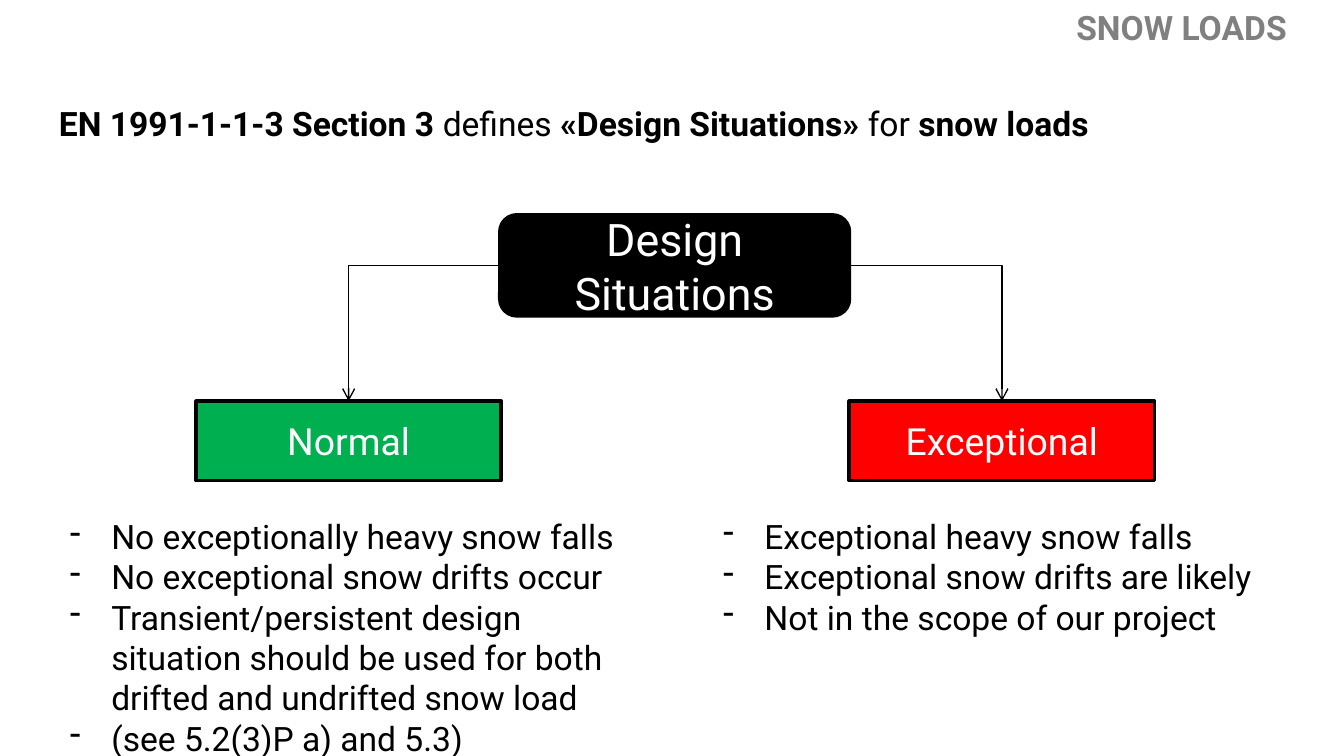
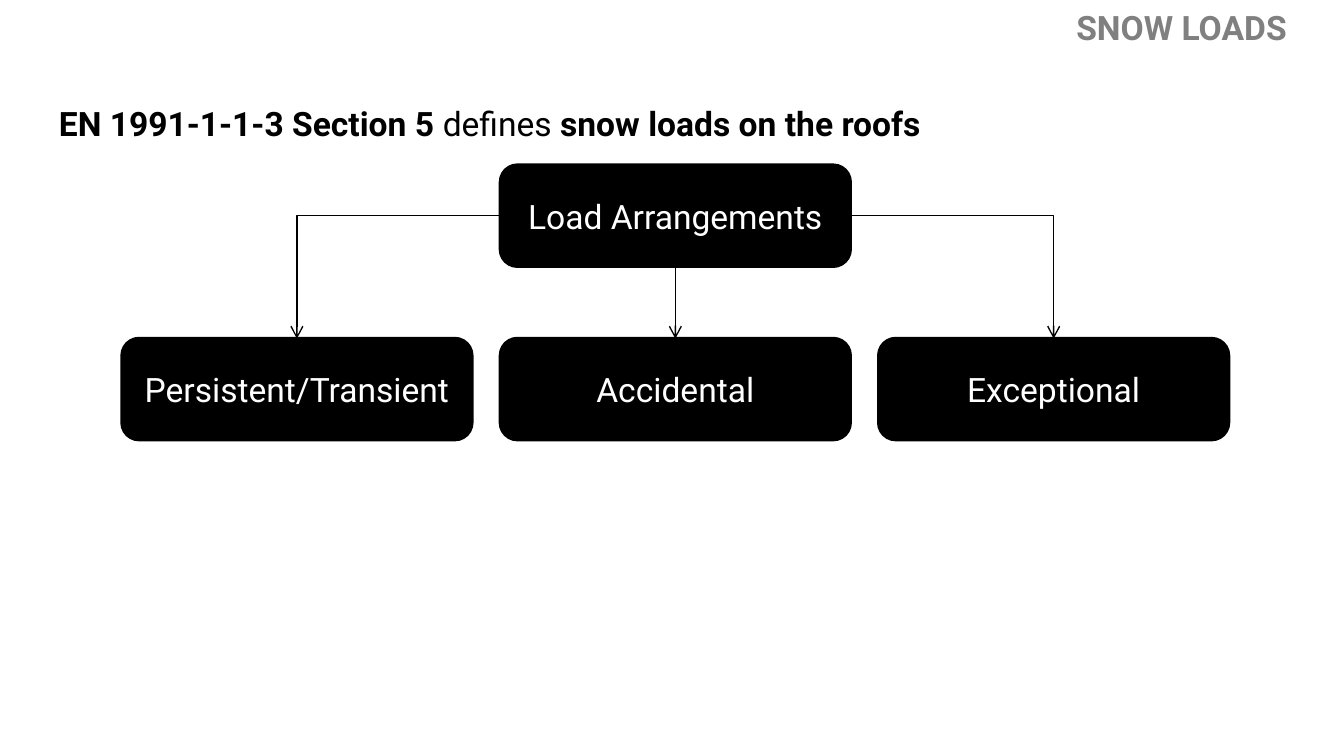
import pptx
import pptx.util
import pptx.dml.color
import pptx.enum.shapes
import pptx.enum.text
import pptx.oxml.ns
import lxml.etree

SHAPE = pptx.enum.shapes.MSO_SHAPE
LINK = pptx.enum.shapes.MSO_CONNECTOR
ALIGN = pptx.enum.text.PP_ALIGN
ANCHOR = pptx.enum.text.MSO_ANCHOR
FIT = pptx.enum.text.MSO_AUTO_SIZE
qn = pptx.oxml.ns.qn
color = pptx.dml.color.RGBColor.from_string

BLACK, WHITE, GRAY, GREEN, RED = "000000", "FFFFFF", "808080", "00B050", "FF0000"
TOP, LEFT, BOTTOM, RIGHT = range(4)

# Slide size and a grid of 100 columns by 75 rows
deck = pptx.Presentation()
deck.slide_width = pptx.util.Inches(10)
deck.slide_height = pptx.util.Inches(5.625)
COL, ROW = deck.slide_width / 100, deck.slide_height / 75
NODE_W, NODE_H = 26, 10
INDENT = int(3.1 * COL)


def add_block(slide, place, paragraphs, size=18, ink=BLACK, fill=None,
              outline=SHAPE.ROUNDED_RECTANGLE, dashes=False):
    """Add a text box, or a filled box; a paragraph is a list of (text, bold)."""
    left, top, width, height = place
    frame = [int(left * COL), int(top * ROW), int(width * COL), int(height * ROW)]
    if fill:
        block = slide.shapes.add_shape(outline, *frame)
        block.shadow.inherit = False
        block.fill.solid()
        block.fill.fore_color.rgb = color(fill)
        block.line.color.rgb = color(BLACK)
        block.line.width = pptx.util.Pt(2)
        layout = {"word_wrap": True, "vertical_anchor": ANCHOR.MIDDLE}
    else:
        block = slide.shapes.add_textbox(*frame)
        layout = {"word_wrap": True, "auto_size": FIT.SHAPE_TO_FIT_TEXT}
    for name, value in layout.items():
        setattr(block.text_frame, name, value)
    for number, runs in enumerate(paragraphs):
        paragraph = (block.text_frame.add_paragraph() if number
                     else block.text_frame.paragraphs[0])
        paragraph.alignment = ALIGN.CENTER if fill else ALIGN.LEFT
        if dashes:
            properties = paragraph._p.get_or_add_pPr()
            properties.set("marL", str(INDENT))
            properties.set("indent", str(-INDENT))
            lxml.etree.SubElement(properties, qn("a:buChar")).set("char", "-")
        for text, bold in runs:
            run = paragraph.add_run()
            run.text = text
            run.font.color.rgb = color(ink)
            style = {"name": "Roboto", "size": pptx.util.Pt(size), "bold": bold}
            for name, value in style.items():
                setattr(run.font, name, value)
    return block


def add_arrow(slide, parent, side, child):
    """Join a side of the parent to the top of the child; side exits bend once."""
    kind = LINK.STRAIGHT if side == BOTTOM else LINK.ELBOW
    arrow = slide.shapes.add_connector(kind, 0, 0, 0, 0)
    arrow.begin_connect(parent, side)
    arrow.end_connect(child, TOP)
    arrow.line.color.rgb = color(BLACK)
    arrow.line.width = pptx.util.Pt(0.75)
    properties = arrow._element.spPr
    if kind == LINK.ELBOW:
        properties.find(qn("a:prstGeom")).set("prst", "bentConnector2")
    lxml.etree.SubElement(arrow.line._get_or_add_ln(), qn("a:tailEnd")).set("type", "arrow")
    lxml.etree.SubElement(properties, qn("a:effectLst"))


# Shared header and statement
statements = [
    [("EN 1991-1-1-3 Section 3 ", True), ("defines ", False),
     ("«Design Situations» ", True), ("for ", False), ("snow loads", True)],
    [("EN 1991-1-1-3 Section 5 ", True), ("defines ", False),
     ("snow loads on the roofs", True)],
]
slides = []
for statement in statements:
    slide = deck.slides.add_slide(deck.slide_layouts[6])
    add_block(slide, (3.4, 9.6, 93.7, 5.33), [statement])
    add_block(slide, (79.1, 0, 20.9, 5.33), [[("SNOW LOADS", True)]], ink=GRAY)
    slides.append(slide)
situations_slide, arrangements_slide = slides

# Design situations: two branches, each with its list
situations = [
    ("Normal", GREEN, LEFT, 25.6,
     ["No exceptionally heavy snow falls",
      "No exceptional snow drifts occur",
      "Transient/persistent design situation should be used for both "
      "drifted and undrifted snow load",
      "(see 5.2(3)P a) and 5.3)"]),
    ("Exceptional", RED, RIGHT, 17.47,
     ["Exceptional heavy snow falls",
      "Exceptional snow drifts are likely",
      "Not in the scope of our project"]),
]
BRANCH_STEP = 48.6
root = add_block(situations_slide, (37.2, 21.33, NODE_W, NODE_H),
                 [[("Design Situations", False)]], 24, WHITE, BLACK)
for index, (name, fill, side, list_h, features) in enumerate(situations):
    shift = index * BRANCH_STEP
    branch = add_block(situations_slide, (14.6 + shift, 39.8, 22.7, 7.87),
                       [[(name, False)]], 20, WHITE, fill, SHAPE.RECTANGLE)
    add_arrow(situations_slide, root, side, branch)
    add_block(situations_slide, (4.2 + shift, 50.53, 43.4, list_h),
              [[(feature, False)] for feature in features], dashes=True)

# Load arrangements: three equal nodes under the root
arrangements = [("Persistent/Transient", LEFT), ("Accidental", BOTTOM), ("Exceptional", RIGHT)]
NODE_LEFT, NODE_STEP = 9.1, 28.15
root = add_block(arrangements_slide, (NODE_LEFT + NODE_STEP, 16.4, NODE_W, NODE_H),
                 [[("Load Arrangements", False)]], ink=WHITE, fill=BLACK)
for index, (name, side) in enumerate(arrangements):
    node = add_block(arrangements_slide,
                     (NODE_LEFT + index * NODE_STEP, 33.6, NODE_W, NODE_H),
                     [[(name, False)]], ink=WHITE, fill=BLACK)
    add_arrow(arrangements_slide, root, side, node)

deck.save("out.pptx")
